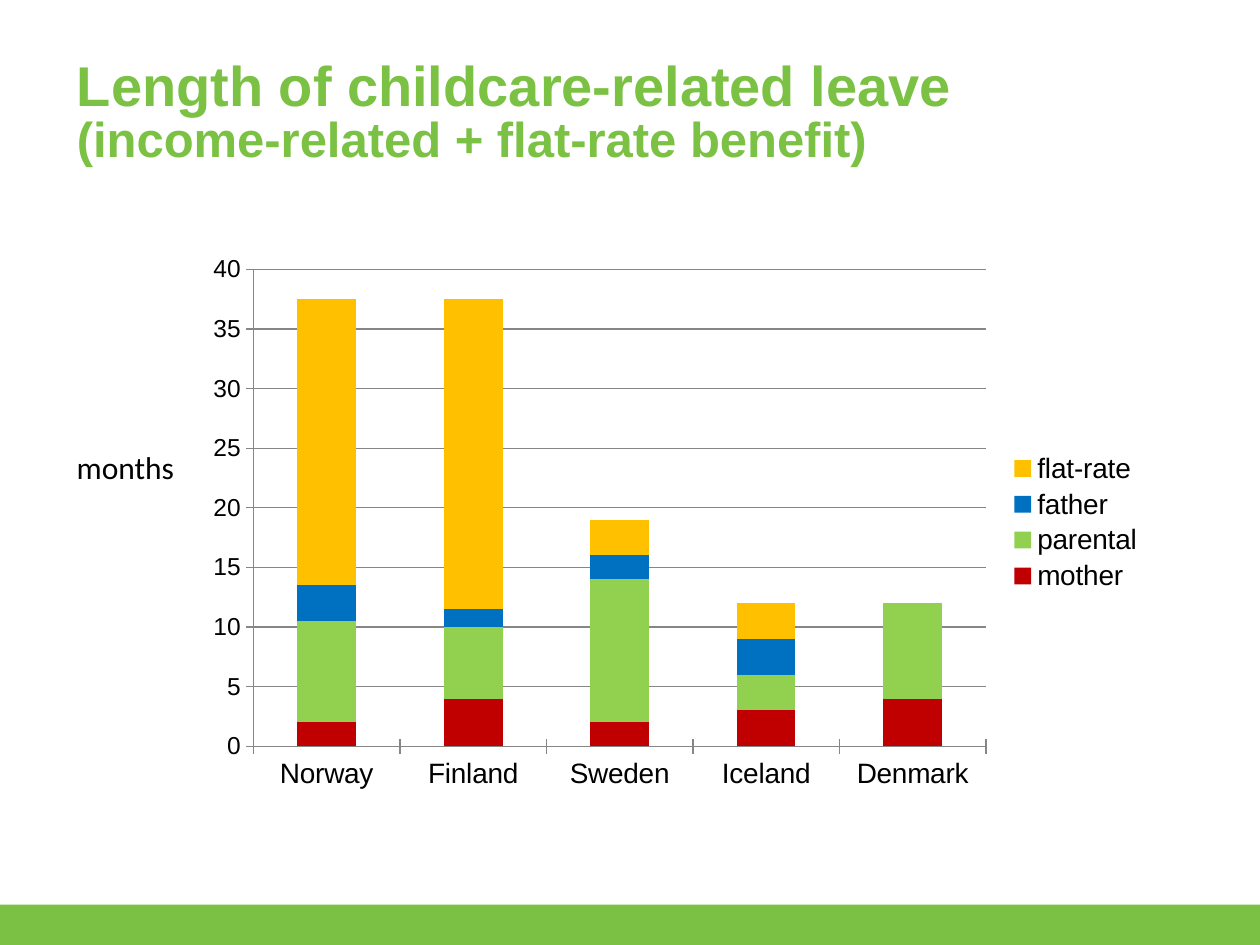
from dataclasses import dataclass

from pptx import Presentation
from pptx import util as u
from pptx.chart.data import CategoryChartData
from pptx.dml.color import RGBColor
from pptx.enum import chart as ch, shapes, text


@dataclass(frozen=True)
class Theme:
    green: str = "7BC143"
    black: str = "000000"
    grid: str = "868686"
    head: str = "Arial"
    body: str = "Calibri"
    title: int = 32
    subtitle: int = 28
    label: int = 18
    category: int = 16
    value: int = 14


T = Theme()

CATEGORIES = ["Norway", "Finland", "Sweden", "Iceland", "Denmark"]
SERIES = [
    ("mother", "C00000", (2, 4, 2, 3, 4)),
    ("parental", "92D050", (8.5, 6, 12, 3, 8)),
    ("father", "0070C0", (3, 1.5, 2, 3, 0)),
    ("flat-rate", "FFC000", (24, 26, 3, 3, 0)),
]


def box(*lengths):
    return [u.Inches(n) for n in lengths]


def set_font(font, size, color=T.black, **formats):
    formats = {"name": T.head, "size": u.Pt(size), **formats}
    for key, value in formats.items():
        setattr(font, key, value)
    font.color.rgb = RGBColor.from_string(color)


def add_footer_bar(s, area):
    sp = s.shapes.add_shape(shapes.MSO_SHAPE.RECTANGLE, *area)
    sp.shadow.inherit = False
    sp.fill.solid()
    sp.fill.fore_color.rgb = RGBColor.from_string(T.green)
    sp.line.fill.background()


def fill_title(s, area, lines):
    sp = s.shapes.title
    sp.left, sp.top, sp.width, sp.height = area
    tf = sp.text_frame
    tf.vertical_anchor = text.MSO_ANCHOR.BOTTOM
    p = tf.paragraphs[0]
    p.alignment = text.PP_ALIGN.LEFT
    p.line_spacing = 0.85
    for i, (line, size) in enumerate(lines):
        if i:
            p.add_line_break()
        r = p.add_run()
        r.text = line
        set_font(r.font, size, T.green, bold=True)


def add_unit_label(s, area, label):
    tf = s.shapes.add_textbox(*area).text_frame
    tf.word_wrap = True
    tf.auto_size = text.MSO_AUTO_SIZE.SHAPE_TO_FIT_TEXT
    r = tf.paragraphs[0].add_run()
    r.text = label
    set_font(r.font, T.label, name=T.body)


def add_leave_chart(s, area):
    data = CategoryChartData()
    data.categories = CATEGORIES
    for name, _, values in SERIES:
        data.add_series(name, values)
    chart = s.shapes.add_chart(
        ch.XL_CHART_TYPE.COLUMN_STACKED, *area, data).chart
    chart.has_title = False
    set_font(chart.font, 10)

    # Stacked columns
    plot = chart.plots[0]
    plot.gap_width, plot.overlap = 150, 100
    plot.vary_by_categories = False
    for series, (_, color, _) in zip(plot.series, SERIES):
        series.format.fill.solid()
        series.format.fill.fore_color.rgb = RGBColor.from_string(color)

    # Axes and gridlines
    axes = ((chart.category_axis, T.category), (chart.value_axis, T.value))
    for axis, size in axes:
        axis.major_tick_mark = ch.XL_TICK_MARK.CROSS
        set_font(axis.tick_labels.font, size)
    value_axis = chart.value_axis
    value_axis.minimum_scale, value_axis.maximum_scale = 0, 40
    value_axis.major_unit = 5
    value_axis.has_major_gridlines = True
    for part in (chart.category_axis, value_axis, value_axis.major_gridlines):
        part.format.line.color.rgb = RGBColor.from_string(T.grid)
        part.format.line.width = u.Pt(0.75)

    # Legend
    chart.has_legend = True
    chart.legend.position = ch.XL_LEGEND_POSITION.RIGHT
    chart.legend.include_in_layout = False
    set_font(chart.legend.font, T.category)


def main():
    prs = Presentation()
    prs.slide_width, prs.slide_height = box(10, 7.5)
    s = prs.slides.add_slide(prs.slide_layouts[5])
    add_footer_bar(s, box(0, 7.18, 10, 0.32))
    fill_title(s, box(0.51, 0.28, 8.98, 1.1), [
        ("Length of childcare-related leave", T.title),
        ("(income-related + flat-rate benefit)", T.subtitle),
    ])
    add_unit_label(s, box(0.51, 3.51, 1.09, 0.4), "months")
    add_leave_chart(s, box(1.54, 1.94, 7.64, 4.41))
    prs.save("out.pptx")


if __name__ == "__main__":
    main()
